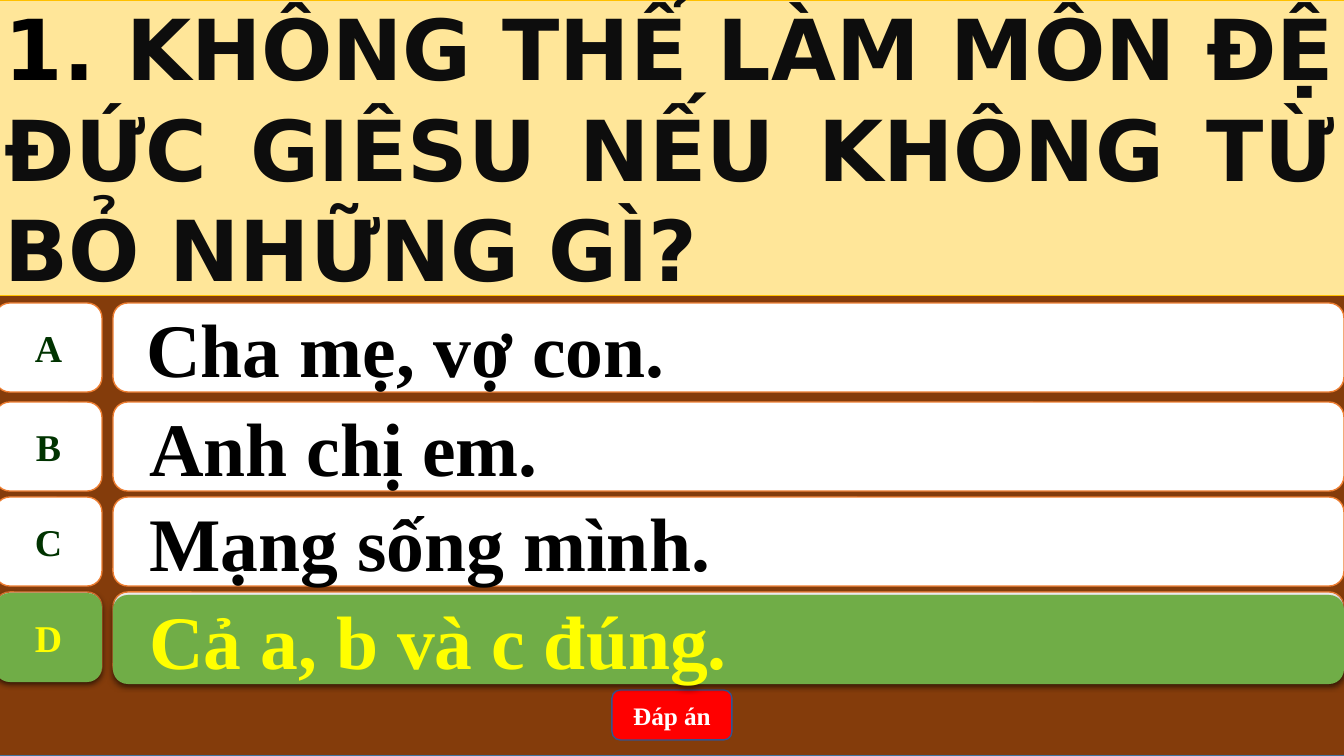
from dataclasses import dataclass

from lxml import etree
from pptx import Presentation
from pptx.dml.color import RGBColor
from pptx.enum.shapes import MSO_SHAPE
from pptx.enum.text import MSO_ANCHOR, PP_ALIGN
from pptx.oxml.ns import qn
from pptx.util import Emu, Pt

RECT = MSO_SHAPE.RECTANGLE
ROUNDED = MSO_SHAPE.ROUNDED_RECTANGLE
TILE = MSO_SHAPE.FLOWCHART_ALTERNATE_PROCESS
MIDDLE = MSO_ANCHOR.MIDDLE
LEFT, CENTER, JUSTIFY = PP_ALIGN.LEFT, PP_ALIGN.CENTER, PP_ALIGN.JUSTIFY

EMU_PER_PX = 914400 / 100.8
SLIDE_W, SLIDE_H = 1344, 756
BOARD_X, BOARD_W = -5, 1350
LETTER_W, ANSWER_X, ANSWER_W, ROW_H = 107, 113, 1231, 89


@dataclass(frozen=True)
class Theme:
    board: str = "843C0B"
    board_line: str = "43739E"
    banner: str = "FFE699"
    banner_line: str = "FFC000"
    option: str = "FFFFFF"
    option_line: str = "ED7D31"
    correct: str = "70AD47"
    correct_text: str = "FFFF00"
    letter: str = "003300"
    answer: str = "000000"
    number: str = "000000"
    question: str = "0D0D0D"
    button: str = "FF0000"
    button_line: str = "325491"
    button_text: str = "FFFFFF"
    shadow: str = "000000"
    serif: str = "Times New Roman"
    sans: str = "DejaVu Sans"
    question_size: int = 60
    answer_size: int = 54
    letter_size: int = 27
    button_size: int = 18


THEME = Theme()


def px(length):
    return Emu(round(length * EMU_PER_PX))


def color(value):
    return RGBColor.from_string(value)


def add_panel(slide, kind, box, fill, line=None, line_width=1):
    panel = slide.shapes.add_shape(kind, *map(px, box))
    panel.shadow.inherit = False
    panel.fill.solid()
    panel.fill.fore_color.rgb = color(fill)
    if line:
        panel.line.color.rgb = color(line)
        panel.line.width = Pt(line_width)
    else:
        panel.line.fill.background()
    return panel


def write(panel, runs, font, size, align, wrap=True, margin_left=10):
    frame = panel.text_frame
    frame.word_wrap = wrap
    frame.vertical_anchor = MIDDLE
    frame.margin_left = px(margin_left)
    paragraph = frame.paragraphs[0]
    paragraph.alignment = align
    for text, ink in runs:
        run = paragraph.add_run()
        run.text = text
        run.font.name = font
        run.font.size = Pt(size)
        run.font.bold = True
        run.font.color.rgb = color(ink)


def cast_shadow(panel):
    effects = panel._element.spPr.find(qn("a:effectLst"))
    shadow = etree.SubElement(
        effects, qn("a:outerShdw"), blurRad=str(Pt(4.5)), dist=str(Pt(1.5)),
        dir="5400000", algn="t", rotWithShape="0")
    ink = etree.SubElement(shadow, qn("a:srgbClr"), val=THEME.shadow)
    etree.SubElement(ink, qn("a:alpha"), val="63000")


def add_row_panels(slide, letter_y, answer_y, fill, line=None):
    letter_panel = add_panel(
        slide, TILE, (BOARD_X, letter_y, LETTER_W, ROW_H), fill, line)
    answer_panel = add_panel(
        slide, ROUNDED, (ANSWER_X, answer_y, ANSWER_W, ROW_H), fill, line)
    return letter_panel, answer_panel


def write_row(panels, letter, answer, letter_ink, answer_ink, indent=32):
    letter_panel, answer_panel = panels
    write(letter_panel, [(letter, letter_ink)], THEME.serif,
          THEME.letter_size, CENTER, wrap=False)
    write(answer_panel, [(answer, answer_ink)], THEME.serif,
          THEME.answer_size, LEFT, margin_left=indent)


def add_question(slide):
    banner = add_panel(slide, RECT, (BOARD_X, 0, BOARD_W, 295),
                       THEME.banner, THEME.banner_line, 0.5)
    question = "KHÔNG THỂ LÀM MÔN ĐỆ ĐỨC GIÊSU NẾU KHÔNG TỪ BỎ NHỮNG GÌ?"
    write(banner, [("1. ", THEME.number), (question, THEME.question)],
          THEME.sans, THEME.question_size, JUSTIFY)


def add_options(slide):
    options = [
        ("A", "Cha mẹ, vợ con.", 303, 29),
        ("B", "Anh chị em.", 402, 32),
        ("C", "Mạng sống mình.", 497, 32),
    ]
    for letter, answer, y, indent in options:
        panels = add_row_panels(slide, y, y, THEME.option, THEME.option_line)
        write_row(panels, letter, answer, THEME.letter, THEME.answer, indent)


def add_correct_option(slide):
    add_row_panels(slide, 592, 592, THEME.option, THEME.option_line)
    panels = add_row_panels(slide, 593, 595, THEME.correct)
    for panel in panels:
        cast_shadow(panel)
    write_row(panels, "D", "Cả a, b và c đúng.",
              THEME.correct_text, THEME.correct_text)


def add_answer_button(slide):
    button = add_panel(slide, ROUNDED, (612, 690, 120, 50),
                       THEME.button, THEME.button_line)
    write(button, [("Đáp án", THEME.button_text)], THEME.serif,
          THEME.button_size, CENTER)


def main():
    deck = Presentation()
    deck.slide_width, deck.slide_height = px(SLIDE_W), px(SLIDE_H)
    slide = deck.slides.add_slide(deck.slide_layouts[6])
    add_panel(slide, RECT, (BOARD_X, 0, BOARD_W, SLIDE_H),
              THEME.board, THEME.board_line)
    add_options(slide)
    add_answer_button(slide)
    add_question(slide)
    add_correct_option(slide)
    deck.save("out.pptx")


if __name__ == "__main__":
    main()
